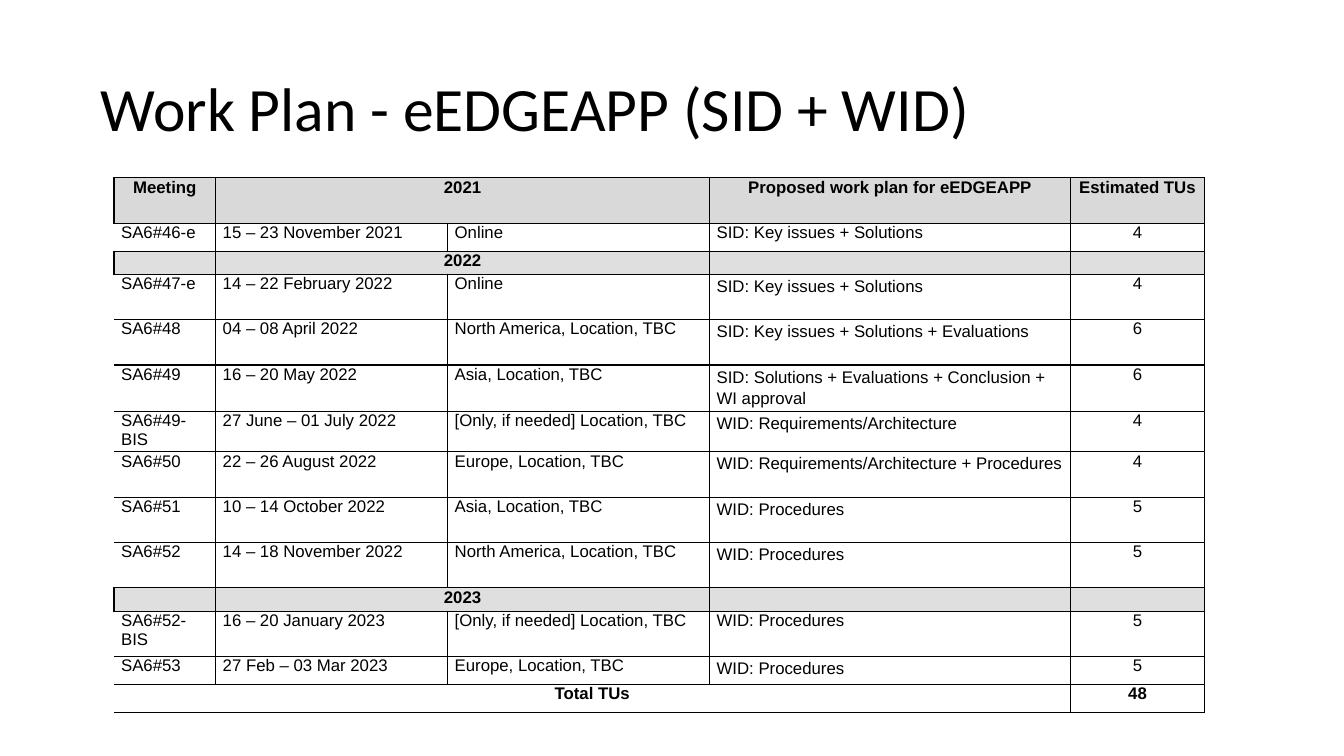
import dataclasses

import lxml.etree
import pptx
import pptx.dml.color
import pptx.enum.text
import pptx.oxml.ns
import pptx.util

Pt = pptx.util.Pt
CENTER = pptx.enum.text.PP_ALIGN.CENTER
LEFT = pptx.enum.text.PP_ALIGN.LEFT


@dataclasses.dataclass(frozen=True)
class Theme:
    ink: str = "000000"
    header: str = "D9D9D9"
    year: str = "DFDFDF"
    paper: str = "FFFFFF"
    title_font: str = "Calibri"
    table_font: str = "Arial"
    title_size: int = 44
    table_size: int = 12
    border: int = 1
    cell_margin: float = 5.1


class SlideBuilder:
    def __init__(self, slide, theme):
        self.slide = slide
        self.theme = theme

    def add_run(self, paragraph, text, font, size, bold=False):
        run = paragraph.add_run()
        run.text = text
        run.font.name = font
        run.font.size = Pt(size)
        run.font.bold = bold
        run.font.color.rgb = pptx.dml.color.RGBColor.from_string(self.theme.ink)

    def add_title(self, text, left, top, width, height):
        shape = self.slide.shapes.add_textbox(Pt(left), Pt(top), Pt(width), Pt(height))
        frame = shape.text_frame
        frame.word_wrap = True
        frame.vertical_anchor = pptx.enum.text.MSO_ANCHOR.MIDDLE
        paragraph = frame.paragraphs[0]
        paragraph.line_spacing = 0.9
        self.add_run(paragraph, text, self.theme.title_font, self.theme.title_size)

    def add_table(self, left, top, widths, heights):
        shape = self.slide.shapes.add_table(
            len(heights), len(widths), Pt(left), Pt(top), Pt(sum(widths)), Pt(sum(heights)))
        table = shape.table
        table.first_row = False
        table.horz_banding = False
        for column, width in zip(table.columns, widths):
            column.width = Pt(width)
        for row, height in zip(table.rows, heights):
            row.height = Pt(height)
        return table

    def style_cell(self, cell, fill, left_border=True):
        cell.margin_left = cell.margin_right = Pt(self.theme.cell_margin)
        cell.margin_top = cell.margin_bottom = 0
        qn = pptx.oxml.ns.qn
        properties = cell._tc.get_or_add_tcPr()
        for side in "LRTB":
            line = lxml.etree.SubElement(
                properties, qn(f"a:ln{side}"), w=str(Pt(self.theme.border)))
            if side == "L" and not left_border:
                lxml.etree.SubElement(line, qn("a:noFill"))
            else:
                solid = lxml.etree.SubElement(line, qn("a:solidFill"))
                lxml.etree.SubElement(solid, qn("a:srgbClr"), val=self.theme.ink)
        cell.fill.solid()
        cell.fill.fore_color.rgb = pptx.dml.color.RGBColor.from_string(fill)

    def write_cell(self, cell, text, alignment=LEFT, bold=False, loose=False):
        paragraph = cell.text_frame.paragraphs[0]
        paragraph.alignment = alignment
        paragraph.space_before = paragraph.space_after = Pt(1)
        if loose:
            paragraph.line_spacing = 1.15
        if text:
            self.add_run(paragraph, text, self.theme.table_font, self.theme.table_size, bold)
        else:
            # An empty cell still takes its line height from the end mark
            lxml.etree.SubElement(paragraph._p, pptx.oxml.ns.qn("a:endParaRPr"),
                                  sz=str(self.theme.table_size * 100))


TALL, SHORT, YEAR = 32.4, 20, 16.6

# Row kind, height, cell texts; None continues the merged cell on its left
ROWS = [
    ("header", TALL, ["Meeting", "2021", None, "Proposed work plan for eEDGEAPP", "Estimated TUs"]),
    ("meeting", SHORT, ["SA6#46-e", "15 – 23 November 2021", "Online",
                        "SID: Key issues + Solutions", "4"]),
    ("year", YEAR, ["", "2022", None, "", ""]),
    ("loose", TALL, ["SA6#47-e", "14 – 22 February 2022", "Online",
                     "SID: Key issues + Solutions", "4"]),
    ("loose", TALL, ["SA6#48", "04 – 08 April 2022", "North America, Location, TBC",
                     "SID: Key issues + Solutions + Evaluations", "6"]),
    ("loose", SHORT, ["SA6#49", "16 – 20 May 2022", "Asia, Location, TBC",
                      "SID: Solutions + Evaluations + Conclusion + WI approval", "6"]),
    ("loose", SHORT, ["SA6#49-BIS", "27 June – 01 July 2022", "[Only, if needed] Location, TBC",
                      "WID: Requirements/Architecture", "4"]),
    ("loose", TALL, ["SA6#50", "22 – 26 August 2022", "Europe, Location, TBC",
                     "WID: Requirements/Architecture + Procedures", "4"]),
    ("loose", TALL, ["SA6#51", "10 – 14 October 2022", "Asia, Location, TBC",
                     "WID: Procedures", "5"]),
    ("loose", TALL, ["SA6#52", "14 – 18 November 2022", "North America, Location, TBC",
                     "WID: Procedures", "5"]),
    ("year", YEAR, ["", "2023", None, "", ""]),
    ("meeting", TALL, ["SA6#52-BIS", "16 – 20 January 2023", "[Only, if needed] Location, TBC",
                       "WID: Procedures", "5"]),
    ("loose", SHORT, ["SA6#53", "27 Feb – 03 Mar 2023", "Europe, Location, TBC",
                      "WID: Procedures", "5"]),
    ("total", SHORT, ["Total TUs", None, None, None, "48"]),
]
COLUMN_WIDTHS = [72.6, 165.7, 187.1, 257.9, 95.7]
PLAN_COLUMN, UNITS_COLUMN = 3, 4


def add_work_plan(builder):
    theme = builder.theme
    fills = {"header": theme.header, "year": theme.year}
    table = builder.add_table(81.4, 127, COLUMN_WIDTHS, [height for _, height, _ in ROWS])
    for row, (kind, _, texts) in enumerate(ROWS):
        strong = kind in ("header", "year", "total")
        origin = 0
        for column, text in enumerate(texts):
            cell = table.cell(row, column)
            has_left_border = column > 0 or kind in fills
            builder.style_cell(cell, fills.get(kind, theme.paper), has_left_border)
            if text is not None:
                origin = column
                centered = strong or column == UNITS_COLUMN
                builder.write_cell(cell, text, CENTER if centered else LEFT, strong,
                                   kind == "loose" and column == PLAN_COLUMN)
            elif column + 1 == len(texts) or texts[column + 1] is not None:
                # Merge once the last continued cell is reached
                table.cell(row, origin).merge(cell)


def main():
    presentation = pptx.Presentation()
    presentation.slide_width = Pt(960)
    presentation.slide_height = Pt(540)
    slide = presentation.slides.add_slide(presentation.slide_layouts[6])
    builder = SlideBuilder(slide, Theme())

    # Heading
    builder.add_title("Work Plan - eEDGEAPP (SID + WID)", 65, 27.4, 828, 104.4)

    # Meeting schedule with estimated time units
    add_work_plan(builder)

    presentation.save("out.pptx")


if __name__ == "__main__":
    main()
